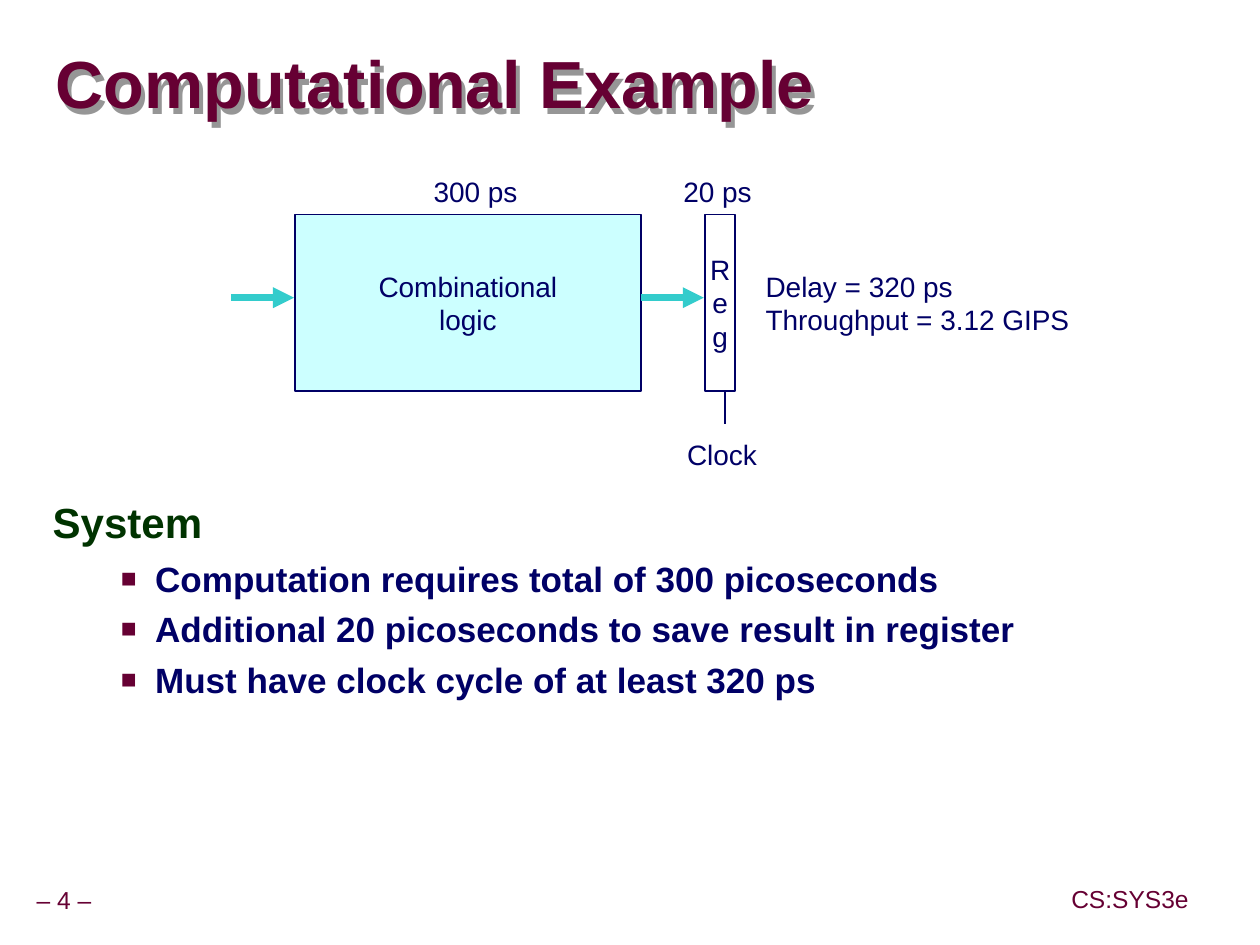
import pptx
import pptx.util
import pptx.dml.color
import pptx.enum.shapes
import pptx.enum.text
import lxml.etree
from dataclasses import dataclass

Pt = pptx.util.Pt
RGB = pptx.dml.color.RGBColor.from_string
ALIGN = pptx.enum.text.PP_ALIGN
ANCHOR = pptx.enum.text.MSO_ANCHOR
DRAWING = "http://schemas.openxmlformats.org/drawingml/2006/main"


@dataclass
class Theme:
    font: str = "Arial"
    maroon: str = "660033"
    navy: str = "000066"
    green: str = "003300"
    teal: str = "33CCCC"
    cyan: str = "CCFFFF"
    white: str = "FFFFFF"
    shadow: str = "969696"
    title_size: int = 38
    heading_size: int = 24
    bullet_size: int = 20
    label_size: int = 16
    footer_size: int = 14


theme = Theme()


def add_xml(parent, tag, **attributes):
    return lxml.etree.SubElement(parent, f"{{{DRAWING}}}{tag}", attributes)


def write(shape, lines, size, color, align=ALIGN.LEFT, anchor=ANCHOR.TOP,
          wrap=False, bold=False, spacing=1.0, margins=(7.2, 3.6)):
    """Fill a shape with one paragraph per line and return the paragraphs."""
    frame = shape.text_frame
    frame.word_wrap = wrap
    frame.vertical_anchor = anchor
    frame.margin_left = frame.margin_right = Pt(margins[0])
    frame.margin_top = frame.margin_bottom = Pt(margins[1])
    frame.text = "\n".join(lines)
    for paragraph in frame.paragraphs:
        paragraph.alignment = align
        paragraph.line_spacing = spacing
        paragraph.font.name = theme.font
        paragraph.font.size = Pt(size)
        paragraph.font.bold = bold
        paragraph.font.color.rgb = RGB(color)
    return frame.paragraphs


presentation = pptx.Presentation()
presentation.slide_width = Pt(719.3)
presentation.slide_height = Pt(539.3)
slide = presentation.slides.add_slide(presentation.slide_layouts[6])
shapes = slide.shapes

# Footer
for text, left, top, width in [("– 4 –", 12.8, 503.5, 47.5),
                               ("CS:SYS3e", 607.7, 502.8, 74.9)]:
    footer = shapes.add_textbox(Pt(left), Pt(top), Pt(width), Pt(22.5))
    write(footer, [text], theme.footer_size, theme.maroon, ALIGN.CENTER,
          ANCHOR.MIDDLE, spacing=0.9, margins=(3.6, 3.6))

# Title with a hard drop shadow
title = shapes.add_textbox(Pt(31.7), Pt(19.4), Pt(685.4), Pt(61.2))
write(title, ["Computational Example"], theme.title_size, theme.maroon,
      anchor=ANCHOR.MIDDLE, wrap=True, bold=True, spacing=0.87, margins=(0, 0))
effects = add_xml(title.element.spPr, "effectLst")
shadow = add_xml(effects, "outerShdw", dist=str(Pt(4)), dir="3360000",
                 algn="ctr", rotWithShape="0")
add_xml(shadow, "srgbClr", val=theme.shadow)

# System requirements
body = shapes.add_textbox(Pt(23), Pt(282), Pt(653), Pt(224.6))
heading, *bullets = write(body, [
    "System",
    "Computation requires total of 300 picoseconds",
    "Additional 20 picoseconds to save result in register",
    "Must have clock cycle of at least 320 ps",
], theme.bullet_size, theme.navy, wrap=True, bold=True)
heading.line_spacing = 0.95
heading.font.size = Pt(theme.heading_size)
heading.font.color.rgb = RGB(theme.green)
for paragraph in bullets:
    paragraph.level = 1
    paragraph.space_before = Pt(5)
    properties = paragraph._p.get_or_add_pPr()
    properties.set("marL", str(Pt(58.5)))
    properties.set("indent", str(Pt(-19.5)))
    # Bullet settings come before the default run properties
    run_defaults = properties.find(f"{{{DRAWING}}}defRPr")
    properties.remove(run_defaults)
    add_xml(add_xml(properties, "buClr"), "srgbClr", val=theme.maroon)
    add_xml(properties, "buSzPct", val="75000")
    add_xml(properties, "buFont", typeface=theme.font)
    add_xml(properties, "buChar", char="■")
    properties.append(run_defaults)

# Pipeline blocks
for lines, left, width, fill in [
    (["Combinational", "logic"], 168.5, 197.3, theme.cyan),
    (["R", "e", "g"], 402.5, 17.3, theme.white),
]:
    block = shapes.add_shape(pptx.enum.shapes.MSO_SHAPE.RECTANGLE,
                             Pt(left), Pt(122.4), Pt(width), Pt(100.8))
    block.shadow.inherit = False
    block.fill.solid()
    block.fill.fore_color.rgb = RGB(fill)
    block.line.color.rgb = RGB(theme.navy)
    block.line.width = Pt(1)
    write(block, lines, theme.label_size, theme.navy, ALIGN.CENTER,
          ANCHOR.MIDDLE)

# Data arrows and clock line
for x1, y1, x2, y2, color, width, arrow in [
    (131.8, 169.9, 167.8, 169.9, theme.teal, 4, True),
    (365.8, 169.9, 401.8, 169.9, theme.teal, 4, True),
    (414, 223.9, 414, 241.9, theme.navy, 1, False),
]:
    connector = shapes.add_connector(pptx.enum.shapes.MSO_CONNECTOR.STRAIGHT,
                                     Pt(x1), Pt(y1), Pt(x2), Pt(y2))
    connector.line.color.rgb = RGB(color)
    connector.line.width = Pt(width)
    if arrow:
        add_xml(connector.line._get_or_add_ln(), "tailEnd", type="triangle")
    add_xml(connector.element.spPr, "effectLst")

# Diagram labels
for lines, left, top, width, height, align in [
    (["300 ps"], 238.5, 95.8, 66, 25.9, ALIGN.CENTER),
    (["20 ps"], 381.6, 95.8, 56, 25.9, ALIGN.CENTER),
    (["Clock"], 383.2, 246.2, 58, 25.9, ALIGN.CENTER),
    (["Delay = 320 ps", "Throughput = 3.12 GIPS"],
     430, 150, 200, 45.4, ALIGN.LEFT),
]:
    label = shapes.add_textbox(Pt(left), Pt(top), Pt(width), Pt(height))
    write(label, lines, theme.label_size, theme.navy, align)
    label.text_frame.auto_size = pptx.enum.text.MSO_AUTO_SIZE.SHAPE_TO_FIT_TEXT

presentation.save("out.pptx")
